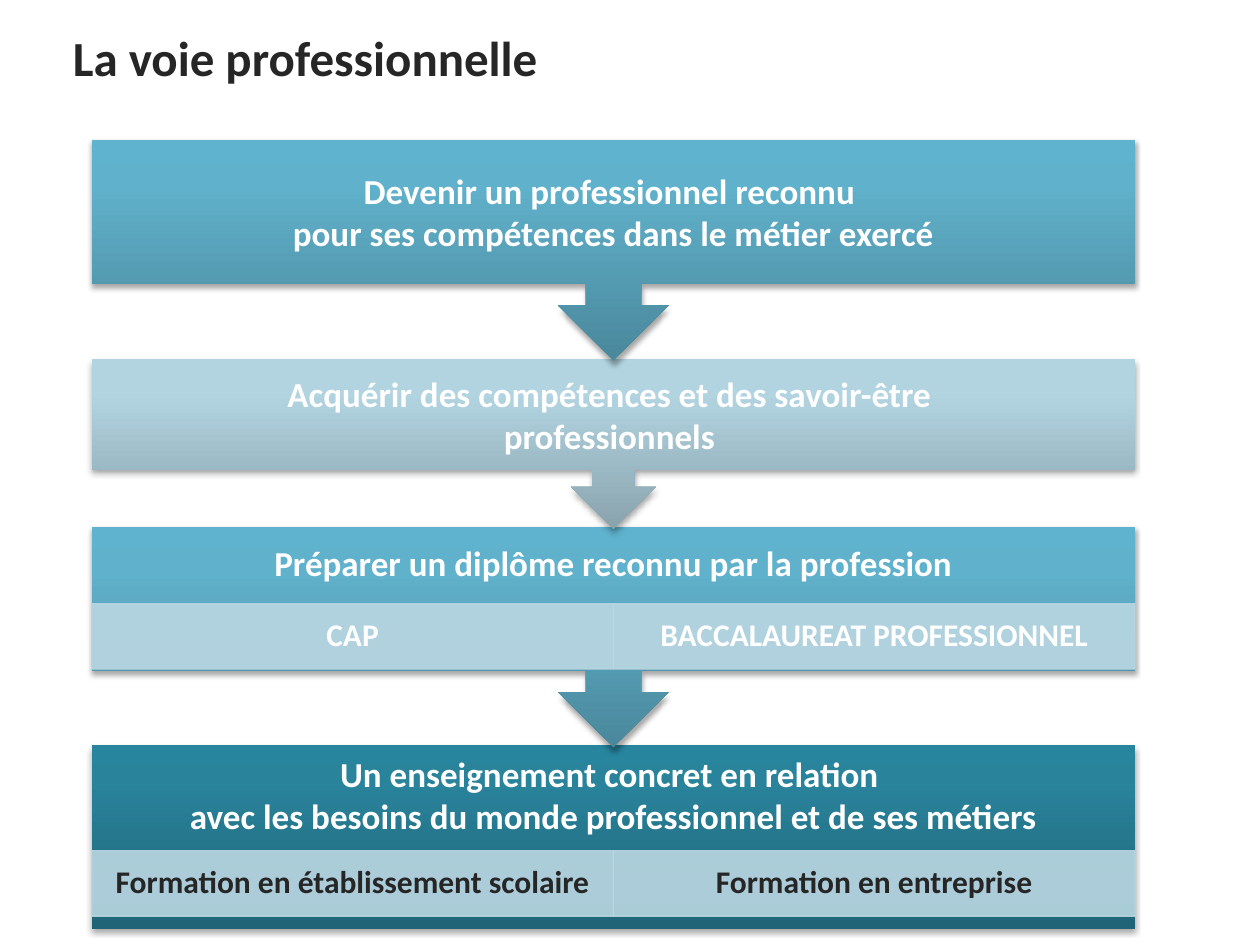
import copy

import pptx
import pptx.dml.color
import pptx.enum.shapes
import pptx.enum.text
import pptx.oxml
import pptx.oxml.ns
import pptx.util

Cm = pptx.util.Cm
Pt = pptx.util.Pt
RGBColor = pptx.dml.color.RGBColor
MSO_SHAPE = pptx.enum.shapes.MSO_SHAPE
PP_ALIGN = pptx.enum.text.PP_ALIGN
qn = pptx.oxml.ns.qn

INK = RGBColor(0x26, 0x26, 0x26)
WHITE = RGBColor(0xFF, 0xFF, 0xFF)
TILE = RGBColor(0xBA, 0xD7, 0xE2)
# Gradients run from the bottom edge (0 %) over 80 % to the top edge (100 %)
DEEP = (RGBColor(0x1F, 0x65, 0x77), RGBColor(0x29, 0x83, 0x9B), RGBColor(0x27, 0x85, 0x9E))
BRIGHT = (RGBColor(0x4A, 0x88, 0x9C), RGBColor(0x60, 0xB1, 0xCB), RGBColor(0x5F, 0xB3, 0xCE))
PALE = (RGBColor(0x89, 0xA3, 0xAD), RGBColor(0xB2, 0xD4, 0xE1), RGBColor(0xB2, 0xD5, 0xE3))

SHADOW = (
    f'<a:outerShdw {pptx.oxml.ns.nsdecls("a")} blurRad="40000" dist="23000" '
    'dir="5400000" rotWithShape="0"><a:srgbClr val="000000">'
    '<a:alpha val="35000"/></a:srgbClr></a:outerShdw>'
)
ALPHA = f'<a:alpha {pptx.oxml.ns.nsdecls("a")} val="90000"/>'

LEFT, WIDTH = 1.85, 21.03
TILE_WIDTH, TILE_HEIGHT = WIDTH / 2, 1.32

presentation = pptx.Presentation()
presentation.slide_width = Cm(25.4)
presentation.slide_height = Cm(19.05)
slide = presentation.slides.add_slide(presentation.slide_layouts[6])


def write(text, left, top, width, height, size=20, color=WHITE,
          align=PP_ALIGN.CENTER, inset=(0.4, 0.4), spacing=None):
    """Add a bold text box; each line of the text is a paragraph."""
    box = slide.shapes.add_textbox(Cm(left), Cm(top), Cm(width), Cm(height))
    frame = box.text_frame
    frame.word_wrap = True
    frame.vertical_anchor = pptx.enum.text.MSO_ANCHOR.MIDDLE
    frame.margin_left = frame.margin_right = Cm(inset[0])
    frame.margin_top = frame.margin_bottom = Cm(inset[1])
    frame.text = text
    for paragraph in frame.paragraphs:
        paragraph.alignment = align
        paragraph.line_spacing = spacing
        for run in paragraph.runs:
            run.font.name = "Calibri"
            run.font.size = Pt(size)
            run.font.bold = True
            run.font.color.rgb = color


# Title
write("La voie professionnelle", 1.22, 0.2, 23.34, 1.9, size=28, color=INK,
      align=PP_ALIGN.LEFT, inset=(0.25, 0.13))

# Steps from the bottom up, so that each arrow lies over the next step:
# text, top, height, text height, gradient, line spacing, tile top, tiles, tile ink
steps = [
    ("Un enseignement concret en relation \n"
     "avec les besoins du monde professionnel et de ses métiers",
     15.01, 3.71, 2.01, DEEP, None,
     17.15, ("Formation en établissement scolaire", "Formation en entreprise"), INK),
    ("Préparer un diplôme reconnu par la profession",
     10.62, 4.45, 1.55, BRIGHT, 0.9,
     12.17, ("CAP", "BACCALAUREAT PROFESSIONNEL"), WHITE),
    ("Acquérir des compétences et des savoir-être \nprofessionnels ",
     7.24, 3.43, 2.24, PALE, None, None, (), None),
    ("Devenir un professionnel reconnu \npour ses compétences dans le métier exercé",
     2.82, 4.45, 2.9, BRIGHT, None, None, (), None),
]

for index, (text, top, height, text_height, gradient, spacing,
            tile_top, tiles, tile_ink) in enumerate(steps):
    # Panel: the last step is a plain block, the others point downwards
    kind = MSO_SHAPE.RECTANGLE if index == 0 else MSO_SHAPE.UP_ARROW_CALLOUT
    panel = slide.shapes.add_shape(kind, Cm(LEFT), Cm(top), Cm(WIDTH), Cm(height))
    panel.rotation = 0 if index == 0 else 180
    panel.line.fill.background()

    # Three-stop gradient that stays upright when the panel is turned
    panel.fill.gradient()
    panel.fill.gradient_angle = 90
    grad_fill = panel._element.spPr.find(qn("a:gradFill"))
    grad_fill.set("rotWithShape", "0")
    stop_list = grad_fill.find(qn("a:gsLst"))
    stop_list.append(copy.deepcopy(stop_list[-1]))
    for stop, position, color in zip(panel.fill.gradient_stops, (0, 0.8, 1), gradient):
        stop.position = position
        stop.color.rgb = color

    # Soft shadow below the panel
    panel.shadow.inherit = False
    effects = panel._element.spPr.find(qn("a:effectLst"))
    effects.append(pptx.oxml.parse_xml(SHADOW))

    write(text, LEFT, top, WIDTH, text_height, spacing=spacing)

    # Two tiles side by side
    for column, label in enumerate(tiles):
        place = (LEFT + column * TILE_WIDTH, tile_top, TILE_WIDTH, TILE_HEIGHT)
        tile = slide.shapes.add_shape(MSO_SHAPE.RECTANGLE, *map(Cm, place))
        tile.shadow.inherit = False
        tile.fill.solid()
        tile.fill.fore_color.rgb = TILE
        tile.line.color.rgb = TILE
        tile.line.width = Pt(0.75)
        for color in tile._element.spPr.iter(qn("a:srgbClr")):
            color.append(pptx.oxml.parse_xml(ALPHA))
        write(label, *place, size=18, color=tile_ink, inset=(0.36, 0.08), spacing=0.9)

presentation.save("out.pptx")
